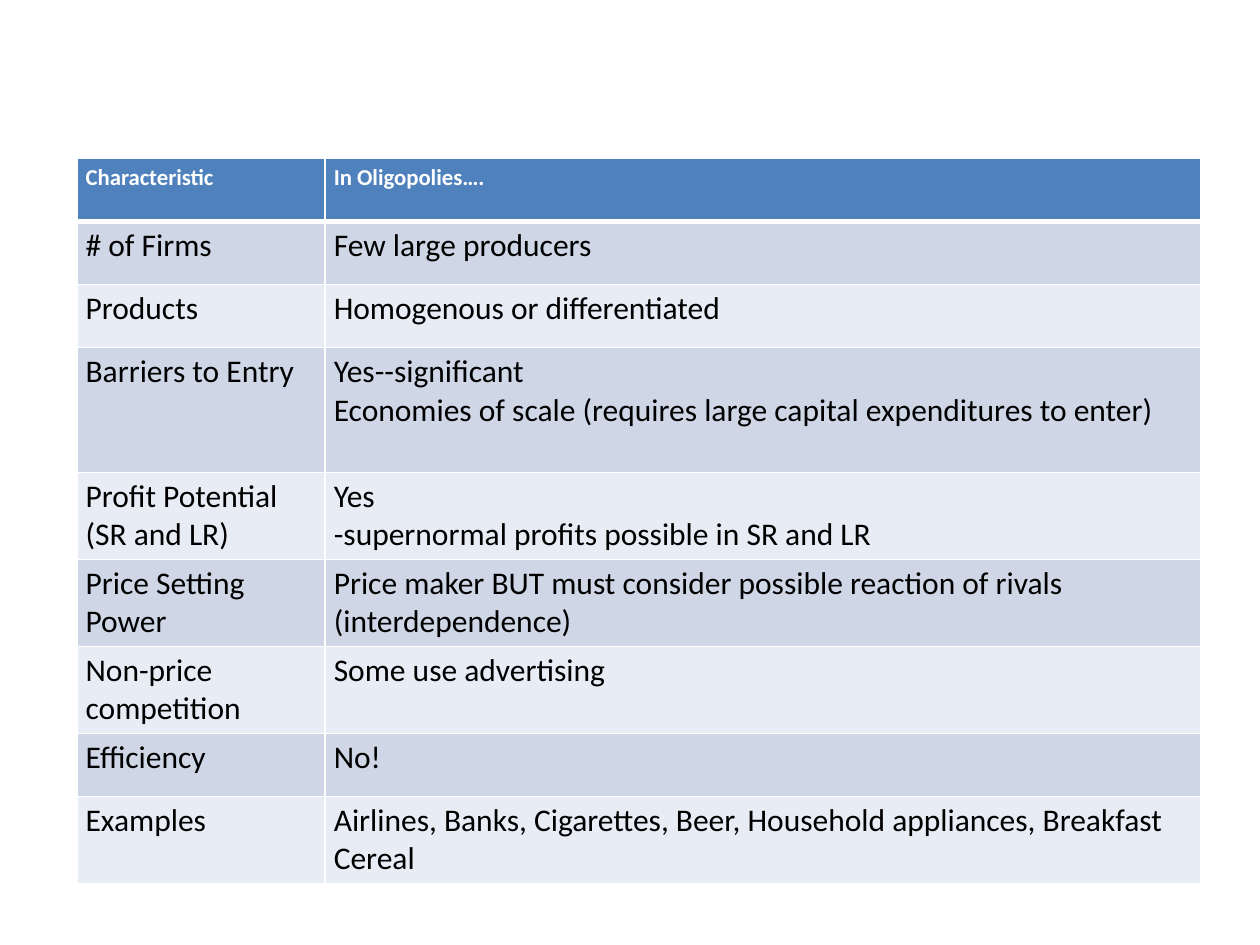
from lxml.etree import SubElement
from pptx import Presentation
from pptx.dml.color import RGBColor
from pptx.oxml.ns import qn
from pptx.util import Inches, Pt

WHITE = RGBColor(0xFF, 0xFF, 0xFF)
BLACK = RGBColor(0x00, 0x00, 0x00)
HEADER_BLUE = RGBColor(0x4F, 0x81, 0xBD)
BANDS = (RGBColor(0xE8, 0xEC, 0xF4), RGBColor(0xCF, 0xD7, 0xE7))

COLUMN_WIDTHS = (1.97, 6.95)
# Each row: height, characteristic, description
ROWS = (
    (0.5, "Characteristic", "In Oligopolies…."),
    (0.5, "# of Firms", "Few large producers"),
    (0.5, "Products", "Homogenous or differentiated"),
    (0.99, "Barriers to Entry",
     "Yes--significant\n"
     "Economies of scale (requires large capital expenditures to enter)"),
    (0.69, "Profit Potential\n(SR and LR)",
     "Yes\n-supernormal profits possible in SR and LR"),
    (0.69, "Price Setting Power",
     "Price maker BUT must consider possible reaction of rivals (interdependence)"),
    (0.69, "Non-price competition", "Some use advertising"),
    (0.5, "Efficiency", "No!"),
    (0.69, "Examples",
     "Airlines, Banks, Cigarettes, Beer, Household appliances, Breakfast Cereal"),
)


def write_text(frame, text, *, font, size, color, bold=False):
    """Fill a text frame, with one paragraph for each line of text."""
    for index, line in enumerate(text.split("\n")):
        para = frame.paragraphs[0] if index == 0 else frame.add_paragraph()
        span = para.add_run()
        span.text = line
        span.font.name = font
        span.font.size = Pt(size)
        span.font.bold = bold
        span.font.color.rgb = color


def set_borders(cell, color, **widths):
    """Draw cell borders; widths in points are keyed L, R, T and B, in that order."""
    properties = cell._tc.get_or_add_tcPr()
    for side, width in widths.items():
        line = SubElement(properties, qn(f"a:ln{side}"), w=str(Pt(width)))
        fill = SubElement(line, qn("a:solidFill"))
        SubElement(fill, qn("a:srgbClr"), val=str(color))


class SlideBuilder:
    font = "Calibri"
    header_size = 13
    body_size = 18

    def __init__(self, page):
        self.page = page

    def table(self, left, top, column_widths, rows):
        heights = [height for height, *_ in rows]
        table = self.page.shapes.add_table(
            len(rows), len(column_widths), Inches(left), Inches(top),
            Inches(sum(column_widths)), Inches(sum(heights))).table
        for column, width in zip(table.columns, column_widths):
            column.width = Inches(width)
        for index, (height, *texts) in enumerate(rows):
            table.rows[index].height = Inches(height)
            for cell, text in zip(table.rows[index].cells, texts):
                self.cell(cell, text, index)

    def cell(self, cell, text, row):
        header = row == 0
        set_borders(cell, WHITE, L=1, R=1, T=3 if row == 1 else 1, B=3 if header else 1)
        cell.fill.solid()
        cell.fill.fore_color.rgb = HEADER_BLUE if header else BANDS[row % 2]
        cell.margin_left = cell.margin_right = Inches(0.07)
        cell.margin_top = cell.margin_bottom = Inches(0.04)
        write_text(cell.text_frame, text, font=self.font, bold=header,
                   size=self.header_size if header else self.body_size,
                   color=WHITE if header else BLACK)


def main():
    deck = Presentation()
    deck.slide_width, deck.slide_height = Inches(10), Inches(7.5)
    builder = SlideBuilder(deck.slides.add_slide(deck.slide_layouts[6]))
    builder.table(0.61, 1.26, COLUMN_WIDTHS, ROWS)
    deck.save("out.pptx")


if __name__ == "__main__":
    main()
